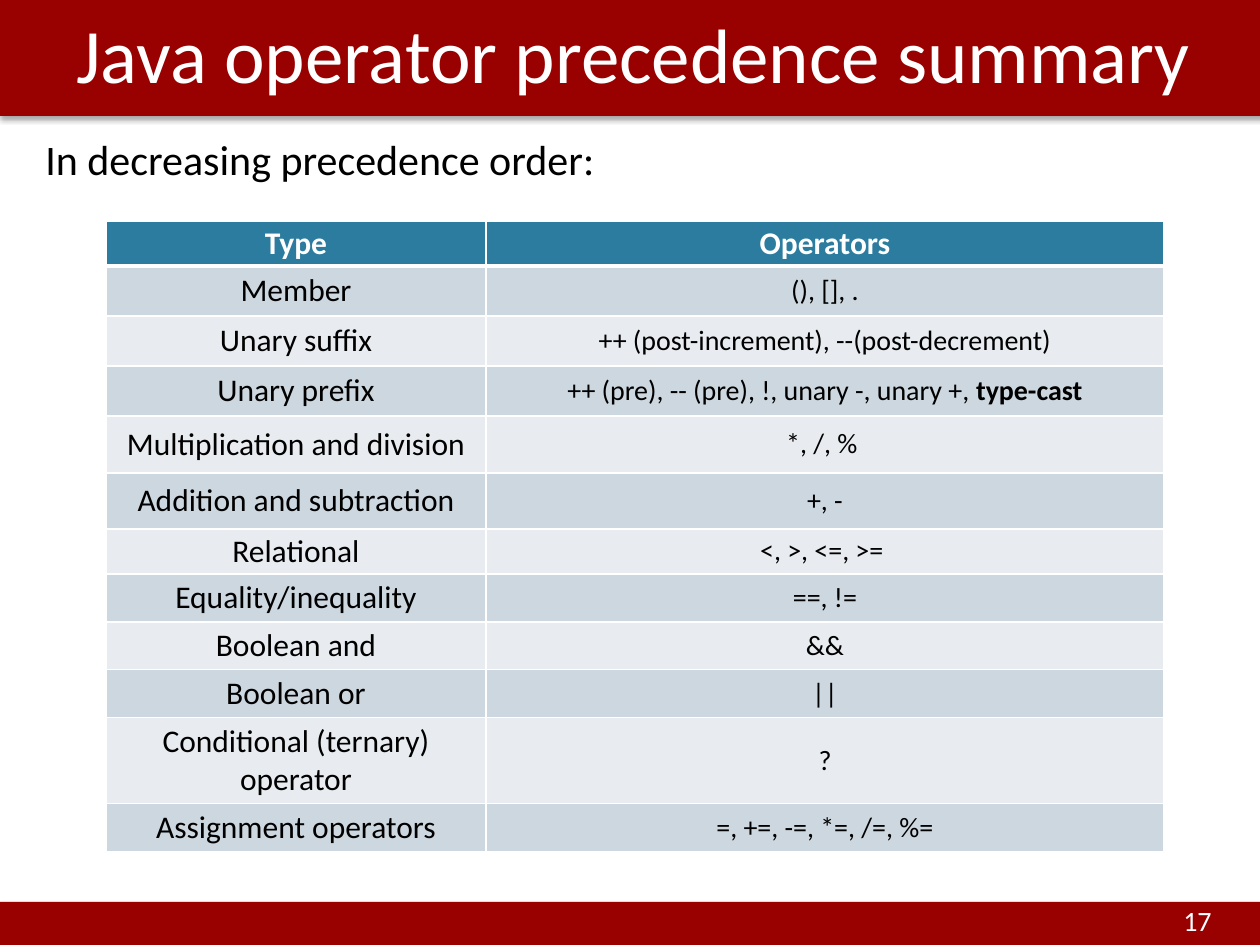
"""Build a slide with a table of Java operator precedence."""
from lxml import etree
from pptx import Presentation
from pptx.dml.color import RGBColor
from pptx.enum.shapes import MSO_SHAPE
from pptx.enum.text import MSO_ANCHOR, PP_ALIGN
from pptx.oxml import parse_xml
from pptx.util import Pt

RECT = MSO_SHAPE.RECTANGLE
MID, TOP = MSO_ANCHOR.MIDDLE, MSO_ANCHOR.TOP
LEFT, CENTER = PP_ALIGN.LEFT, PP_ALIGN.CENTER
PX = 914400 / 126
NS = "http://schemas.openxmlformats.org/drawingml/2006/main"
RED, WHITE, BLACK = "990000", "FFFFFF", "000000"
HEAD, DARK, LIGHT = "2C7C9F", "CDD7DF", "E8ECF0"


def tint(part, color):
    if hasattr(part, "solid"):
        part.solid()
        part = part.fore_color
    part.rgb = RGBColor.from_string(color)


def write(para, runs, size, color, align):
    para.alignment = align
    for text, bold in runs:
        run = para.add_run()
        run.text = text
        run.font.name = "Calibri"
        run.font.size = Pt(size)
        run.font.bold = bold
        tint(run.font.fill, color)


prs = Presentation()
prs.slide_width, prs.slide_height = round(1260 * PX), round(945 * PX)
slide = prs.slides.add_slide(prs.slide_layouts[6])
shapes = slide.shapes

for top, high in [(902, 43), (-1, 117)]:
    bar = shapes.add_shape(RECT, *[round(n * PX) for n in (0, top, 1265, high)])
    bar.shadow.inherit = False
    tint(bar.fill, RED)
    bar.line.fill.background()
    props = bar.fill._xPr
    props.remove(props.find(f"{{{NS}}}effectLst"))
    props.append(parse_xml(
        f'<a:effectLst xmlns:a="{NS}"><a:outerShdw blurRad="{Pt(3.1)}" '
        f'dist="{Pt(1.8)}" dir="5400000" rotWithShape="0">'
        f'<a:srgbClr val="{BLACK}"><a:alpha val="35000"/></a:srgbClr>'
        '</a:outerShdw></a:effectLst>'))

labels = [
    ("17", (1171, 897, 123, 47), 16, WHITE, LEFT, TOP, True),
    ("Java operator precedence summary", (-9, -26, 1286, 157), 44, WHITE,
     CENTER, MID, True),
    ("In decreasing precedence order:", (33, 127, 581, 63), 24, BLACK,
     LEFT, TOP, False),
]
for text, place, size, color, align, anchor, wrap in labels:
    frame = shapes.add_textbox(*[round(n * PX) for n in place]).text_frame
    frame.word_wrap = wrap
    frame.vertical_anchor = anchor
    write(frame.paragraphs[0], [(text, False)], size, color, align)

rows = [
    (45, "Type", "Operators"),
    (50, "Member", "(), [], ."),
    (50, "Unary suffix", "++ (post-increment), --(post-decrement)"),
    (50, "Unary prefix", "++ (pre), -- (pre), !, unary -, unary +, "),
    (57, "Multiplication and division", "*, /, % "),
    (56, "Addition and subtraction", "+, -"),
    (45, "Relational", "<, >, <=, >= "),
    (48, "Equality/inequality", "==, !="),
    (48, "Boolean and", "&&"),
    (48, "Boolean or", "||"),
    (86, "Conditional (ternary) operator", "?"),
    (48, "Assignment operators", "=, +=, -=, *=, /=, %="),
]
high = sum(row[0] for row in rows)
place = [round(n * PX) for n in (106, 221, 1058, high)]
table = shapes.add_table(len(rows), 2, *place).table
for col, wide in zip(table.columns, (380, 678)):
    col.width = round(wide * PX)

for i, (tall, *texts) in enumerate(rows):
    table.rows[i].height = round(tall * PX)
    for j, text in enumerate(texts):
        cell = table.cell(i, j)
        cell.vertical_anchor = MID
        cell.margin_left = cell.margin_right = round(13 * PX)
        cell.margin_top = cell.margin_bottom = round(3 * PX)
        props = cell._tc.get_or_add_tcPr()
        for side in "LRTB":
            thick = (i, side) in [(0, "B"), (1, "T")]
            line = etree.SubElement(props, f"{{{NS}}}ln{side}",
                                    w=str(Pt(3 if thick else 1)))
            fill = etree.SubElement(line, f"{{{NS}}}solidFill")
            etree.SubElement(fill, f"{{{NS}}}srgbClr", val=WHITE)
        tint(cell.fill, HEAD if i == 0 else DARK if i % 2 else LIGHT)
        runs = [(text, i == 0)]
        if (i, j) == (3, 1):
            runs.append(("type-cast", True))
        write(cell.text_frame.paragraphs[0], runs,
              16 if i and j else 18, BLACK if i else WHITE, CENTER)

prs.save("out.pptx")
